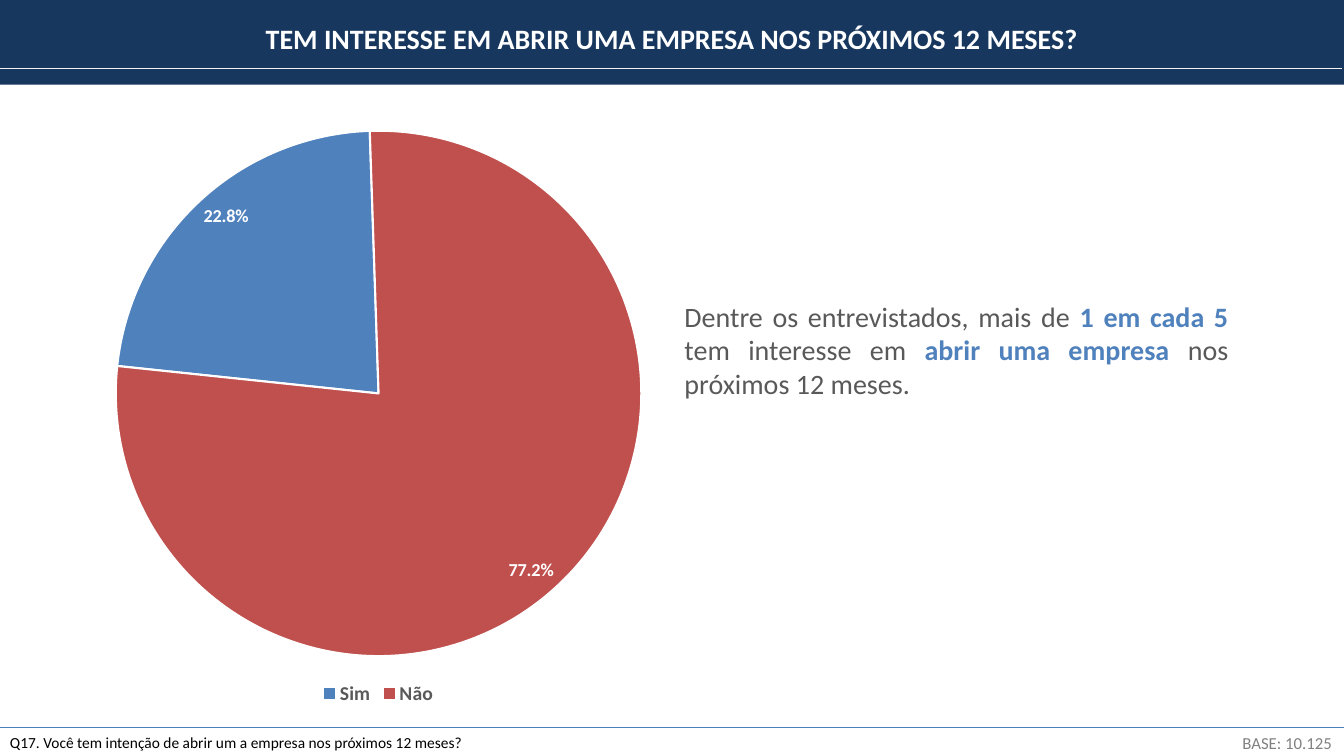
from dataclasses import dataclass

from lxml import etree
from pptx import Presentation
from pptx.chart.data import CategoryChartData
from pptx.dml.color import RGBColor
from pptx.enum.chart import XL_CHART_TYPE, XL_LABEL_POSITION, XL_LEGEND_POSITION
from pptx.enum.shapes import MSO_CONNECTOR, MSO_SHAPE
from pptx.enum.text import PP_ALIGN
from pptx.oxml import parse_xml
from pptx.oxml.ns import nsdecls, qn
from pptx.util import Inches, Pt

LEFT, CENTER, RIGHT, JUSTIFY = PP_ALIGN.LEFT, PP_ALIGN.CENTER, PP_ALIGN.RIGHT, PP_ALIGN.JUSTIFY
PIE = XL_CHART_TYPE.PIE
INSIDE_END = XL_LABEL_POSITION.INSIDE_END
BOTTOM = XL_LEGEND_POSITION.BOTTOM
STRAIGHT = MSO_CONNECTOR.STRAIGHT
RECTANGLE = MSO_SHAPE.RECTANGLE


@dataclass(frozen=True)
class Theme:
    font: str = "Calibri"
    navy: str = "17375E"
    blue: str = "4F81BD"
    red: str = "C0504D"
    white: str = "FFFFFF"
    black: str = "000000"
    body: str = "595959"
    muted: str = "808080"
    header_rule: str = "F2F2F2"
    footer_rule: str = "4B7EBC"
    large: int = 20
    legend: int = 14
    label: int = 13
    base: int = 12
    note: int = 11


theme = Theme()


def style_font(font, size, color, bold=False):
    font.name = theme.font
    font.size = Pt(size)
    font.bold = bold
    font.color.rgb = RGBColor.from_string(color)


def add_text(text, box, size, color, bold=False, align=LEFT, highlight=None):
    """Add a text box; parts of text between asterisks are bold in the highlight colour."""
    shape = slide.shapes.add_textbox(*map(Inches, box))
    shape.text_frame.word_wrap = True
    paragraph = shape.text_frame.paragraphs[0]
    paragraph.alignment = align
    for index, part in enumerate(text.split("*")):
        marked = index % 2 == 1
        run = paragraph.add_run()
        run.text = part
        style_font(run.font, size, highlight if marked else color, bold or marked)
    return shape


presentation = Presentation()
presentation.slide_width = Inches(13.33)
presentation.slide_height = Inches(7.5)
slide = presentation.slides.add_slide(presentation.slide_layouts[6])

# Header band and the two rules
header = slide.shapes.add_shape(RECTANGLE, Inches(-0.01), 0, Inches(13.34), Inches(0.84))
header.shadow.inherit = False
header.fill.solid()
header.fill.fore_color.rgb = RGBColor.from_string(theme.navy)
header.line.fill.background()

for left, right, top, color, width in (
    (0, 13.33, 7.22, theme.footer_rule, 0.75),
    (-0.03, 13.31, 0.68, theme.header_rule, 1),
):
    rule = slide.shapes.add_connector(
        STRAIGHT, Inches(left), Inches(top), Inches(right), Inches(top)
    )
    rule.line.color.rgb = RGBColor.from_string(color)
    rule.line.width = Pt(width)
    etree.SubElement(rule.element.spPr, qn("a:effectLst"))

add_text("TEM INTERESSE EM ABRIR UMA EMPRESA NOS PRÓXIMOS 12 MESES?",
         (0, 0.16, 13.33, 0.44), theme.large, theme.white, bold=True, align=CENTER)

# Pie chart
chart_data = CategoryChartData(number_format="0.0%")
chart_data.categories = ["Sim", "Não"]
chart_data.add_series("Series 1", (0.228, 0.772))
chart = slide.shapes.add_chart(
    PIE, Inches(0.37), Inches(1.15), Inches(6.77), Inches(5.89), chart_data
).chart
chart.has_title = False
style_font(chart.font, 10, theme.black)
chart.has_legend = True
chart.legend.position = BOTTOM
chart.legend.include_in_layout = False
style_font(chart.legend.font, theme.legend, theme.body, bold=True)

plot = chart.plots[0]
plot.vary_by_categories = True
for index, color in enumerate((theme.blue, theme.red)):
    point_format = plot.series[0].points[index].format
    point_format.fill.solid()
    point_format.fill.fore_color.rgb = RGBColor.from_string(color)
    point_format.line.color.rgb = RGBColor.from_string(theme.white)
    point_format.line.width = Pt(1.5)

labels = plot.series[0].data_labels
labels.show_value = True
labels.number_format = "0.0%"
labels.number_format_is_linked = False
labels.position = INSIDE_END
style_font(labels.font, theme.label, theme.white, bold=True)

# First slice angle and plot area, as fractions of the chart frame
pie = chart.element.find(".//" + qn("c:pieChart"))
for angle in pie.findall(qn("c:firstSliceAng")):
    pie.remove(angle)
etree.SubElement(pie, qn("c:firstSliceAng")).set("val", "276")
plot_area = pie.getparent()
for layout in plot_area.findall(qn("c:layout")):
    plot_area.remove(layout)
plot_area.insert(0, parse_xml(
    f'<c:layout {nsdecls("c")}><c:manualLayout><c:layoutTarget val="inner"/>'
    '<c:xMode val="edge"/><c:yMode val="edge"/><c:x val="0.115"/><c:y val="0.025"/>'
    '<c:w val="0.77"/><c:h val="0.885"/></c:manualLayout></c:layout>'
))

# Finding and footer
finding = add_text(
    "Dentre os entrevistados, mais de *1 em cada 5 *tem interesse em "
    "*abrir uma empresa *nos próximos 12 meses.",
    (6.69, 2.92, 5.59, 1.11), theme.large, theme.body, align=JUSTIFY, highlight=theme.blue)
finding.fill.solid()
finding.fill.fore_color.rgb = RGBColor.from_string(theme.white)

add_text("Q17. Você tem intenção de abrir um a empresa nos próximos 12 meses?",
         (0, 7.22, 6.66, 0.29), theme.note, theme.black)
add_text("BASE: 10.125", (11.86, 7.22, 1.45, 0.3), theme.base, theme.muted, align=RIGHT)

presentation.save("out.pptx")
